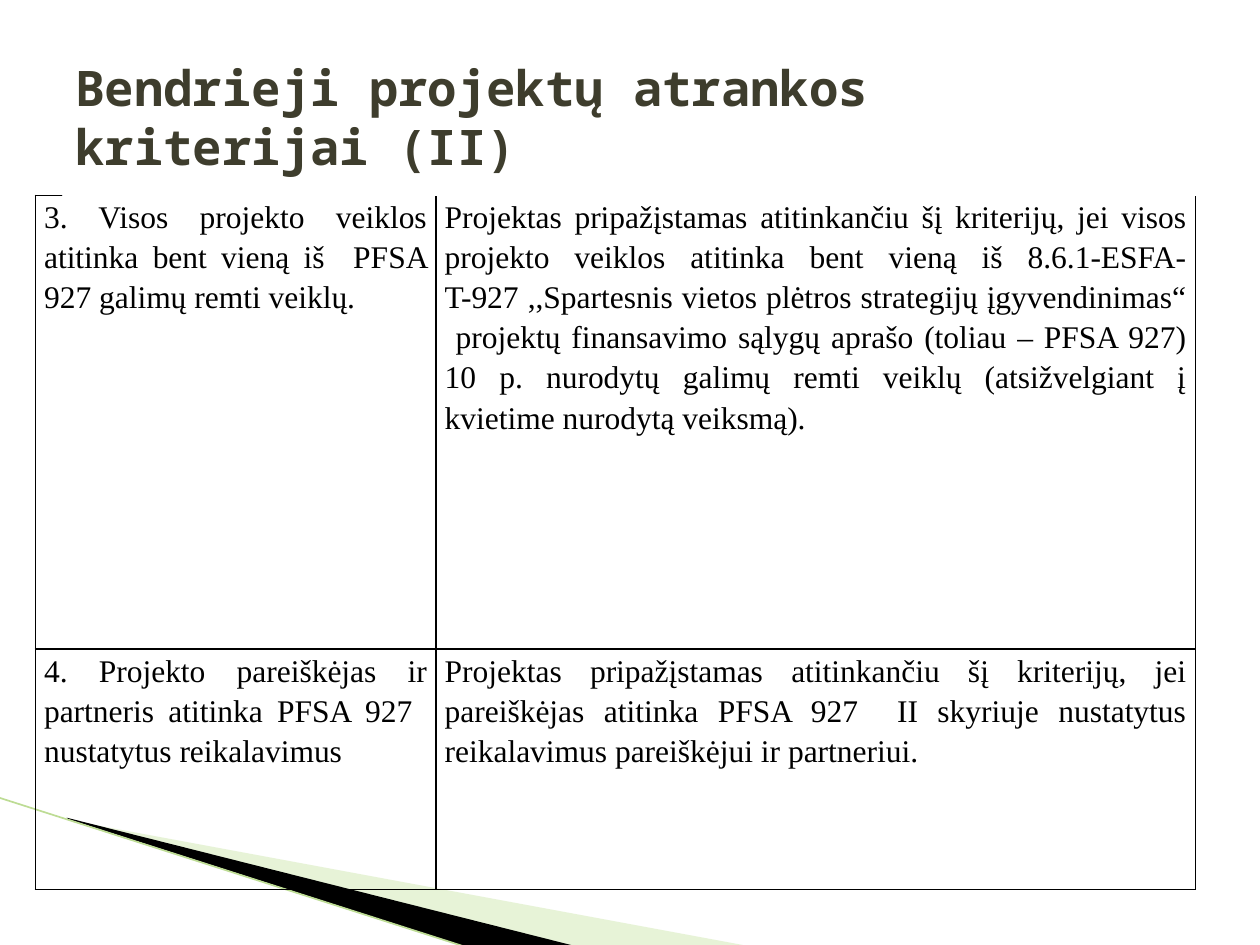
from lxml.etree import SubElement
from pptx import Presentation
from pptx.dml.color import RGBColor
from pptx.enum.shapes import MSO_CONNECTOR
from pptx.enum.text import MSO_ANCHOR, PP_ALIGN
from pptx.oxml.ns import qn
from pptx.util import Inches, Pt

COLORS = {
    "white": "FFFFFF",
    "black": "000000",
    "title": "3E3D2D",
    "light green": "C3E19D",
    "line green": "BDDC94",
}
WEDGES = [
    ("light green", 40, [(0.55, 6.51), (5.95, 7.51), (4.56, 7.51), (0.55, 6.5)]),
    ("black", 100, [(0.53, 6.49), (4.57, 7.51), (3.72, 7.52), (0.54, 6.5)]),
]
COLUMN_WIDTHS = [3.18, 6.03]
ROW_HEIGHTS = [3.6, 1.91]
CRITERIA = [
    (
        "3. Visos projekto veiklos atitinka bent vieną iš  PFSA 927 galimų remti veiklų.",
        "Projektas pripažįstamas atitinkančiu šį kriterijų, jei visos projekto veiklos "
        "atitinka bent vieną iš 8.6.1-ESFA-T-927 ,,Spartesnis vietos plėtros strategijų "
        "įgyvendinimas“  projektų finansavimo sąlygų aprašo (toliau – PFSA 927) 10 p. "
        "nurodytų galimų remti veiklų (atsižvelgiant į kvietime nurodytą veiksmą).",
    ),
    (
        "4. Projekto pareiškėjas ir partneris atitinka PFSA 927  nustatytus reikalavimus",
        "Projektas pripažįstamas atitinkančiu šį kriterijų, jei pareiškėjas atitinka "
        "PFSA 927  II skyriuje nustatytus reikalavimus pareiškėjui ir partneriui.",
    ),
]


def color(name):
    return RGBColor.from_string(COLORS[name])


def add_borders(cell):
    """Draw a 1 pt black line on all four sides of a cell."""
    properties = cell._tc.get_or_add_tcPr()
    for position, side in enumerate(("a:lnL", "a:lnR", "a:lnT", "a:lnB")):
        border = properties.makeelement(qn(side), {"w": str(Pt(1))})
        fill = SubElement(border, qn("a:solidFill"))
        SubElement(fill, qn("a:srgbClr"), val=COLORS["black"])
        properties.insert(position, border)


presentation = Presentation()
presentation.slide_width = Inches(10)
presentation.slide_height = Inches(7.5)
slide = presentation.slides.add_slide(presentation.slide_layouts[5])
shapes = slide.shapes

# Decorative wedges in the lower left corner
for fill_name, opacity, points in WEDGES:
    corners = [(Inches(x), Inches(y)) for x, y in points]
    builder = shapes.build_freeform(*corners[0])
    builder.add_line_segments(corners[1:], close=True)
    wedge = builder.convert_to_shape()
    wedge.shadow.inherit = False
    wedge.fill.solid()
    wedge.fill.fore_color.rgb = color(fill_name)
    wedge.line.fill.background()
    if opacity < 100:
        fill_color = wedge._element.spPr.find(".//" + qn("a:srgbClr"))
        SubElement(fill_color, qn("a:alpha"), val=str(opacity * 1000))

edge = shapes.add_connector(
    MSO_CONNECTOR.STRAIGHT, Inches(-0.01), Inches(6.33), Inches(3.71), Inches(7.52)
)
edge.line.color.rgb = color("line green")
edge.line.width = Pt(0.95)
SubElement(edge._element.spPr, qn("a:effectLst"))

# Criteria table
table = shapes.add_table(
    len(CRITERIA), len(COLUMN_WIDTHS),
    Inches(0.28), Inches(1.55), Inches(sum(COLUMN_WIDTHS)), Inches(sum(ROW_HEIGHTS)),
).table
table.first_row = False
table.horz_banding = False
for column, width in zip(table.columns, COLUMN_WIDTHS):
    column.width = Inches(width)
for row, height, texts in zip(table.rows, ROW_HEIGHTS, CRITERIA):
    row.height = Inches(height)
    for cell, text in zip(row.cells, texts):
        cell.text = text
        cell.fill.background()
        cell.margin_left = cell.margin_right = Inches(0.07)
        cell.margin_top = cell.margin_bottom = 0
        add_borders(cell)
        paragraph = cell.text_frame.paragraphs[0]
        paragraph.alignment = PP_ALIGN.JUSTIFY
        paragraph.line_spacing = 1.15
        paragraph.font.name = "Times New Roman"
        paragraph.font.size = Pt(18)
        paragraph.font.color.rgb = color("black")

# The title lies in front of the table's top border
title = shapes.title
shapes._spTree.append(title._element)
title.left, title.top = Inches(0.5), Inches(0.3)
title.width, title.height = Inches(9), Inches(1.25)
title.fill.solid()
title.fill.fore_color.rgb = color("white")
title.line.color.rgb = color("white")
title.line.width = Pt(0.75)
title.text_frame.text = "Bendrieji projektų atrankos kriterijai (II)"
title.text_frame.word_wrap = True
title.text_frame.vertical_anchor = MSO_ANCHOR.MIDDLE
paragraph = title.text_frame.paragraphs[0]
paragraph.alignment = PP_ALIGN.LEFT
paragraph.font.name = "Noto Sans Mono"
paragraph.font.size = Pt(28)
paragraph.font.bold = True
paragraph.font.color.rgb = color("title")

presentation.save("out.pptx")
